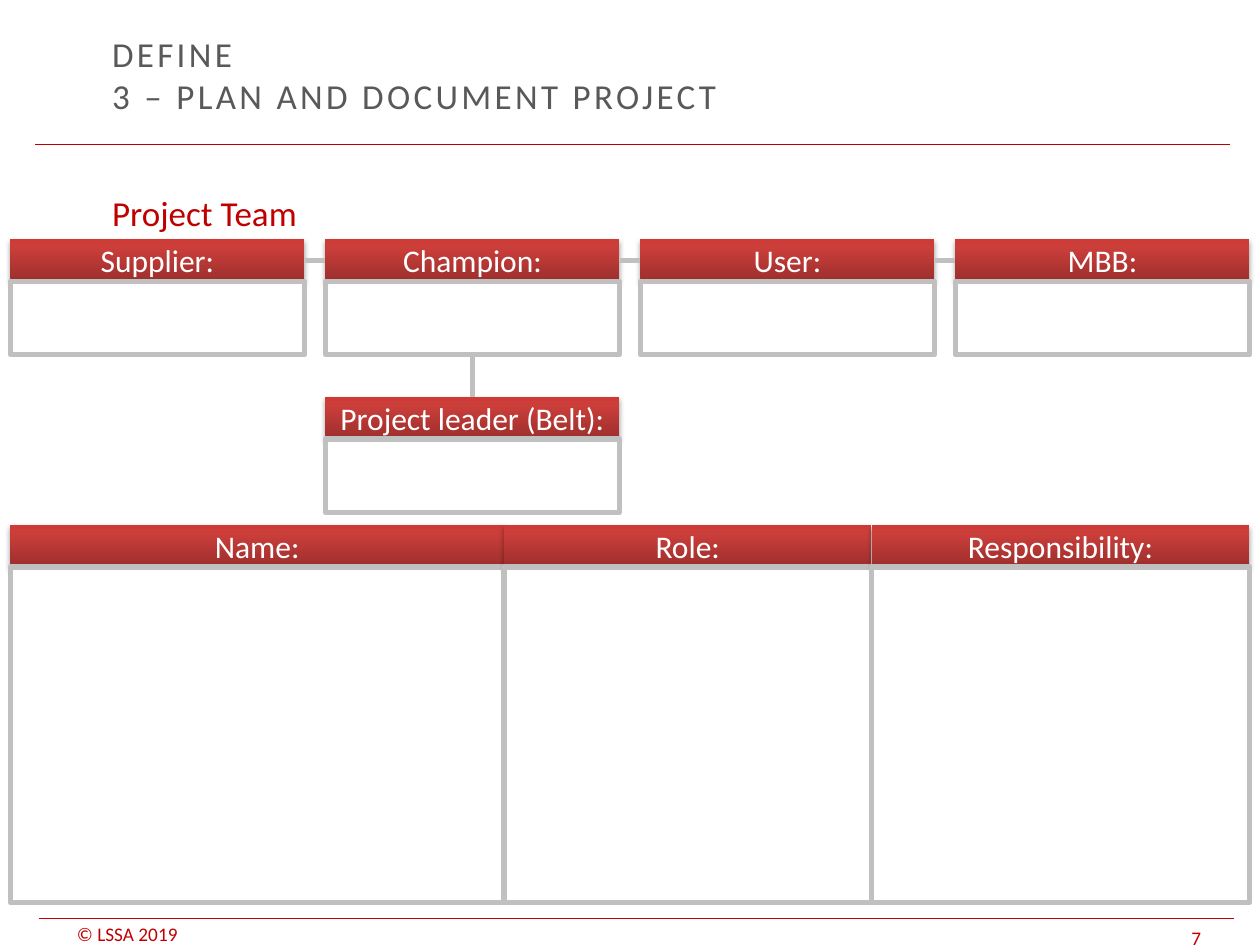
from itertools import pairwise
from copy import deepcopy

from lxml.etree import SubElement
from pptx import Presentation
from pptx.dml.color import RGBColor
from pptx.enum.shapes import MSO_CONNECTOR, MSO_SHAPE
from pptx.enum.text import MSO_ANCHOR, PP_ALIGN
from pptx.oxml.ns import qn
from pptx.util import Cm, Pt

RED, GREY, WHITE, BLACK = "C00000", "C0C0C0", "FFFFFF", "000000"
HEADER_STOPS = [(0, "9C2F2D"), (0.8, "CB3E3A"), (1, "CE3B37")]
LEFT, HEADER_HEIGHT = 0.21, 0.85
TEAM_TOP, TEAM_WIDTH, TEAM_PITCH, TEAM_BOX_HEIGHT = 4.82, 5.93, 6.35, 1.48
LEADER_TOP = 8
TABLE_TOP, TABLE_BOX_HEIGHT = 10.58, 6.77


def rgb(value):
    """Turn a hex string into a colour."""
    return RGBColor.from_string(value)


def set_format(target, values):
    """Set each named attribute on the target."""
    for name, value in values.items():
        setattr(target, name, value)


def write(frame, lines, size, color, align=PP_ALIGN.LEFT, spacing=None):
    """Write lines into one paragraph, parted by line breaks."""
    paragraph = frame.paragraphs[0]
    paragraph.alignment = align
    for index, line in enumerate(lines):
        if index:
            paragraph.add_line_break()
        run = paragraph.add_run()
        run.text = line
        set_format(run.font, {"name": "Calibri", "size": Pt(size)})
        run.font.color.rgb = rgb(color)
        if spacing:
            run.font._element.set("spc", str(spacing))


def add_label(slide, area, lines, size, color, anchor, margin=0.13, spacing=None):
    """Add a text box with left-aligned text."""
    frame = slide.shapes.add_textbox(*map(Cm, area)).text_frame
    set_format(frame, {
        "word_wrap": True,
        "vertical_anchor": anchor,
        "margin_top": Cm(margin),
        "margin_bottom": Cm(margin),
    })
    write(frame, lines, size, color, spacing=spacing)


def add_shadow(shape):
    """Give a shape a soft shadow below it."""
    effects = shape._element.spPr.find(qn("a:effectLst"))
    shadow = SubElement(effects, qn("a:outerShdw"), blurRad=str(Pt(3.1)),
                        dist=str(Pt(1.8)), dir="5400000", rotWithShape="0")
    tone = SubElement(shadow, qn("a:srgbClr"), val=BLACK)
    SubElement(tone, qn("a:alpha"), val="35000")


def add_rectangle(slide, area):
    """Add a rectangle without the theme's shadow."""
    shape = slide.shapes.add_shape(MSO_SHAPE.RECTANGLE, *map(Cm, area))
    shape.shadow.inherit = False
    return shape


def add_header(slide, area, title):
    """Add a red gradient header with a centred title."""
    header = add_rectangle(slide, area)
    header.line.fill.background()
    header.fill.gradient()
    header.fill.gradient_angle = 90
    stop_list = header._element.spPr.find(qn("a:gradFill")).find(qn("a:gsLst"))
    stop_list.append(deepcopy(stop_list[-1]))
    for stop, (position, color) in zip(header.fill.gradient_stops, HEADER_STOPS):
        stop.position = position
        stop.color.rgb = rgb(color)
    add_shadow(header)
    header.text_frame.vertical_anchor = MSO_ANCHOR.MIDDLE
    write(header.text_frame, [title], 18, WHITE, PP_ALIGN.CENTER)
    return header


def add_card(slide, left, top, width, box_height, title):
    """Add a header with an empty field under it."""
    header = add_header(slide, (left, top, width, HEADER_HEIGHT), title)
    field = add_rectangle(slide, (left, top + HEADER_HEIGHT, width, box_height))
    field.fill.solid()
    field.fill.fore_color.rgb = rgb(WHITE)
    field.line.color.rgb = rgb(GREY)
    field.line.width = Pt(3)
    return header, field


def add_line(slide, ends, color, width):
    """Add a straight line without a shadow."""
    line = slide.shapes.add_connector(MSO_CONNECTOR.STRAIGHT, *map(Cm, ends))
    line.line.color.rgb = rgb(color)
    line.line.width = Pt(width)
    SubElement(line._element.spPr, qn("a:effectLst"))
    return line


def join(slide, start, start_side, end, end_side):
    """Join two rectangles at the middle of the given sides."""
    link = add_line(slide, (0, 0, 0, 0), GREY, 3)
    link.begin_connect(start, start_side)
    link.end_connect(end, end_side)


def add_team(slide):
    """Add the team row and the project leader below the champion."""
    roles = ["Supplier:", "Champion:", "User:", "MBB:"]
    cards = [
        add_card(slide, LEFT + index * TEAM_PITCH, TEAM_TOP, TEAM_WIDTH,
                 TEAM_BOX_HEIGHT, role)
        for index, role in enumerate(roles)
    ]
    leader, _ = add_card(slide, LEFT + TEAM_PITCH, LEADER_TOP, TEAM_WIDTH,
                         TEAM_BOX_HEIGHT, "Project leader (Belt):")
    for (header, _), (next_header, _) in pairwise(cards):
        join(slide, header, 3, next_header, 1)
    champion_field = cards[1][1]
    join(slide, champion_field, 2, leader, 0)


def add_members(slide):
    """Add the adjoining columns for the team members."""
    left = LEFT
    for title, width in [("Name:", 9.95), ("Role:", 7.41), ("Responsibility:", 7.62)]:
        add_card(slide, left, TABLE_TOP, width, TABLE_BOX_HEIGHT, title)
        left += width


def main():
    """Build and save the slide."""
    deck = Presentation()
    deck.slide_width, deck.slide_height = Cm(25.4), Cm(19.05)
    slide = deck.slides.add_slide(deck.slide_layouts[6])
    add_label(slide, (1.3, 18.59, 3.61, 0.46), ["© LSSA 2019"], 11, RED,
              MSO_ANCHOR.BOTTOM, margin=0)
    add_label(slide, (23.77, 18.57, 1.63, 0.56), ["7"], 11, RED,
              MSO_ANCHOR.BOTTOM, margin=0)
    add_line(slide, (0.71, 2.92, 24.79, 2.92), RED, 0.75)
    add_line(slide, (0.79, 18.52, 24.87, 18.52), RED, 0.75)
    add_label(slide, (2.01, 0.66, 18.01, 1.68),
              ["DEFINE", "3 – PLAN AND DOCUMENT PROJECT"], 20, "595959",
              MSO_ANCHOR.MIDDLE, spacing=190)
    add_label(slide, (2.01, 3.73, 22, 14), ["Project Team"], 20, RED, MSO_ANCHOR.TOP)
    add_team(slide)
    add_members(slide)
    deck.save("out.pptx")


if __name__ == "__main__":
    main()
